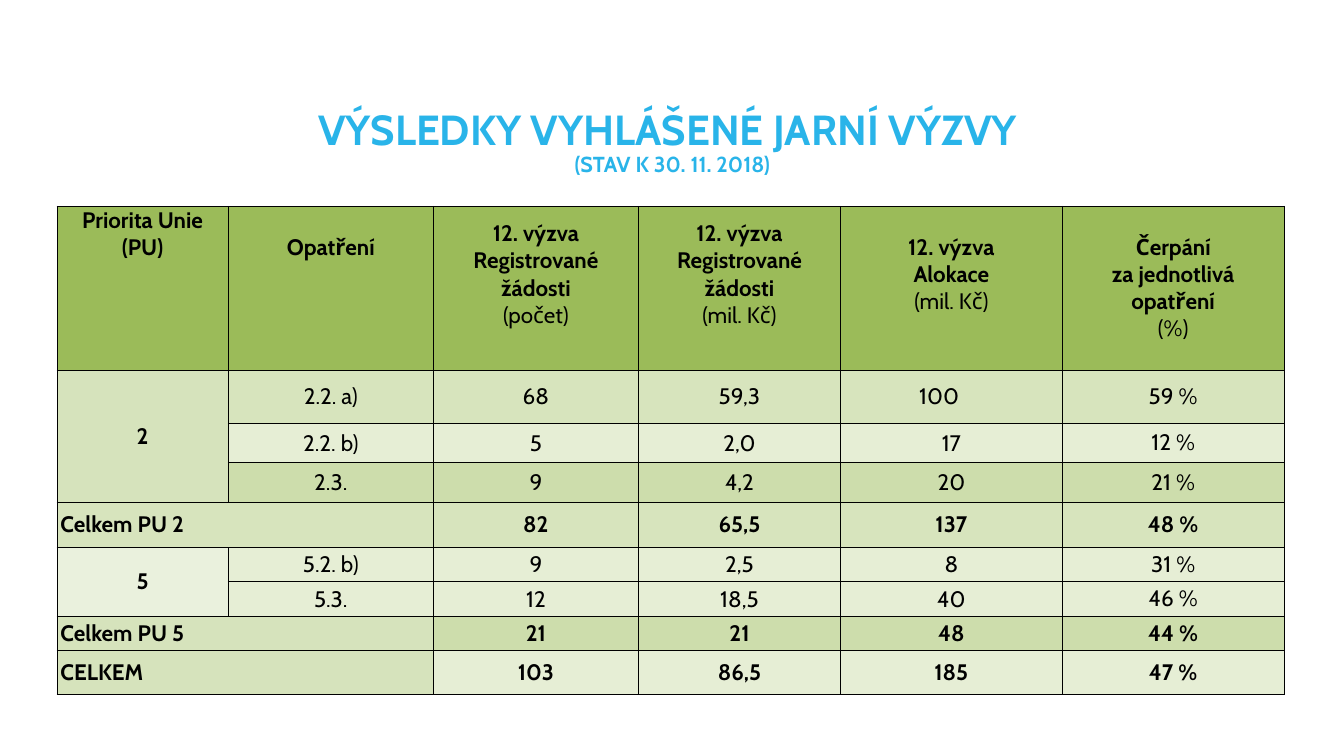
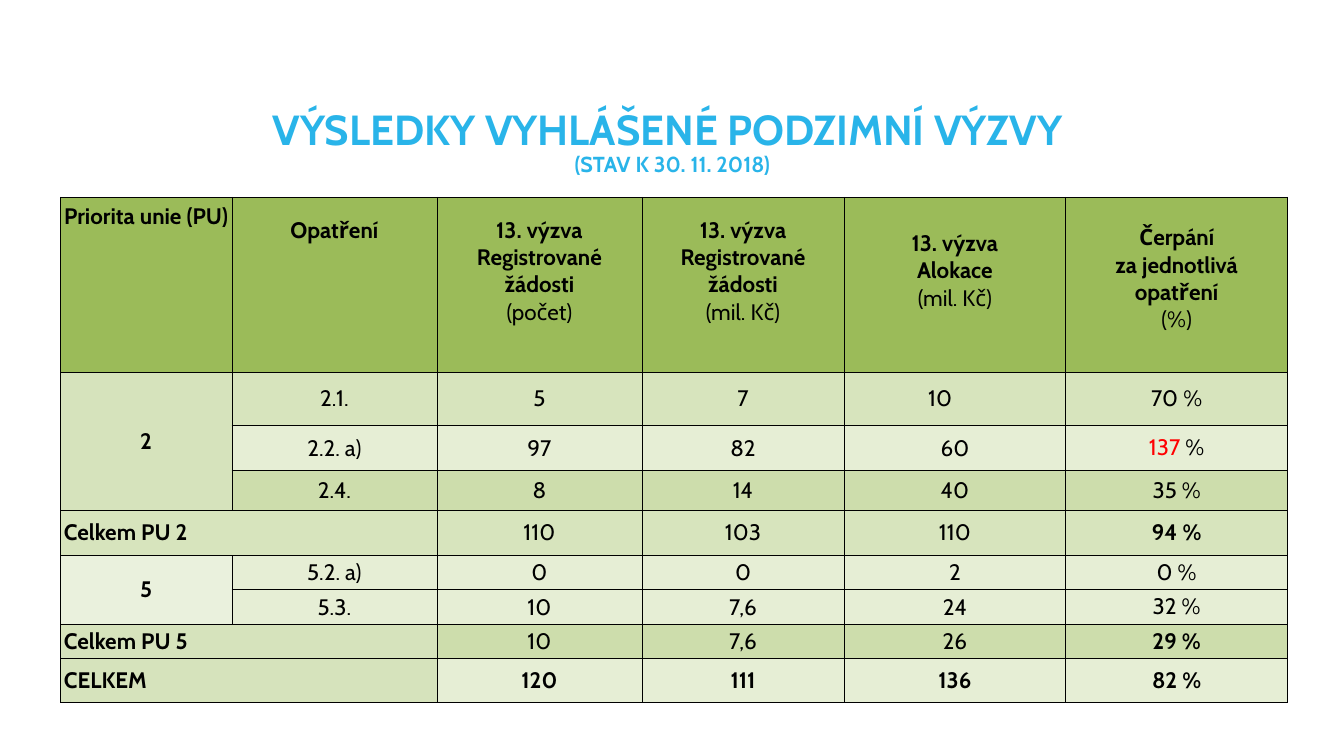
"""Two slides with the results of the spring and autumn calls, one table each."""
from lxml.etree import SubElement
from pptx import Presentation
from pptx.dml.color import RGBColor
from pptx.enum.text import MSO_ANCHOR, MSO_AUTO_SIZE, PP_ALIGN
from pptx.oxml.ns import qn
from pptx.util import Inches, Pt

COLORS = {
    "title": "29B4E9", "text": "000000", "over": "FF0000", "border": "000000",
    "header": "9BBB59", "light": "E6EED5", "mid": "D7E4BD", "dark": "CDDDAC",
    "group": "D6E3BC", "group_light": "EAF1DD",
}
FONT = "Cabin"
STATUS = "(STAV K 30. 11. 2018)"
MARGINS = {"margin_left": 0.07, "margin_right": 0.07, "margin_top": 0.01, "margin_bottom": 0}
NO_MARGINS = dict.fromkeys(MARGINS, 0)
TITLE_BOX = {"left": 1.37, "top": 2.16, "width": 23.94, "height": 1.34}
COLUMN_WIDTHS = [3.4, 4.07, 4.07, 4.01, 4.4, 4.4]
ROW_FILLS = ["mid", "light", "dark", "mid", "light", "light", "dark", "light"]
LABEL_FILLS = ["group", "group", "group", "mid", "group_light", "group_light", "group", "group"]
ALLOCATION, DRAWN = 4, 5

CALLS = [
    {
        "title": "VÝSLEDKY VYHLÁŠENÉ JARNÍ VÝZVY",
        "number": "12. výzva",
        "priority": "Priorita Unie (PU)",
        "header_tops": [0.01, 0.54, 0.27, 0.27, 0.54, 0.54],
        "table_at": (1.13, 4.09),
        "row_heights": [3.25, 1.05, 0.79, 0.78, 0.9, 0.68, 0.68, 0.68, 0.88],
        "bold_subtotals": True,
        "first_allocation_left": 1.56,
        "rows": [
            ("2", "2.2. a)", "68", "59,3", "100", "59 %"),
            ("", "2.2. b)", "5", "2,0", "17", "12 %"),
            ("", "2.3.", "9", "4,2", "20", "21 %"),
            ("Celkem PU 2", "", "82", "65,5", "137", "48 %"),
            ("5", "5.2. b)", "9", "2,5", "8", "31 %"),
            ("", "5.3.", "12", "18,5", "40", "46 %"),
            ("Celkem PU 5", "", "21", "21", "48", "44 %"),
            ("CELKEM", "", "103", "86,5", "185", "47 %"),
        ],
    },
    {
        "title": "VÝSLEDKY VYHLÁŠENÉ PODZIMNÍ VÝZVY",
        "number": "13. výzva",
        "priority": "Priorita unie (PU)",
        "header_tops": [0.12, 0.39, 0.39, 0.39, 0.65, 0.54],
        "table_at": (1.2, 3.91),
        "row_heights": [3.47, 1.05, 0.91, 0.78, 0.9, 0.68, 0.68, 0.68, 0.88],
        "bold_subtotals": False,
        "first_allocation_left": 1.67,
        "rows": [
            ("2", "2.1.", "5", "7", "10", "70 %"),
            ("", "2.2. a)", "97", "82", "60", "137 %"),
            ("", "2.4.", "8", "14", "40", "35 %"),
            ("Celkem PU 2", "", "110", "103", "110", "94 %"),
            ("5", "5.2. a)", "0", "0", "2", "0 %"),
            ("", "5.3.", "10", "7,6", "24", "32 %"),
            ("Celkem PU 5", "", "10", "7,6", "26", "29 %"),
            ("CELKEM", "", "120", "111", "136", "82 %"),
        ],
    },
]


def header_lines(call):
    number = call["number"]
    requests = f"{number} Registrované žádosti"
    return [
        [call["priority"]],
        ["Opatření"],
        [requests, "(počet)"],
        [requests, "(mil. Kč)"],
        [number, "Alokace", "(mil. Kč)"],
        ["Čerpání", "za jednotlivá", "opatření", "(%)"],
    ]


def set_inches(target, lengths):
    for attribute, length in lengths.items():
        setattr(target, attribute, Inches(length))


def add_run(paragraph, text, size=32, bold=False, color="text"):
    run = paragraph.add_run()
    run.text = text
    for attribute, value in {"name": FONT, "size": Pt(size), "bold": bold}.items():
        setattr(run.font, attribute, value)
    run.font.color.rgb = RGBColor.from_string(COLORS[color])


def style_cell(cell, fill, column):
    set_inches(cell, NO_MARGINS if column == DRAWN else MARGINS)
    cell.vertical_anchor = MSO_ANCHOR.MIDDLE
    properties = cell._tc.get_or_add_tcPr()
    for side in ("a:lnL", "a:lnR", "a:lnT", "a:lnB"):
        line = SubElement(properties, qn(side), w=str(Pt(1)))
        solid = SubElement(line, qn("a:solidFill"))
        SubElement(solid, qn("a:srgbClr"), val=COLORS["border"])
    cell.fill.solid()
    cell.fill.fore_color.rgb = RGBColor.from_string(COLORS[fill])


def fill_header(table, call):
    for column, (lines, top) in enumerate(zip(header_lines(call), call["header_tops"])):
        cell = table.cell(0, column)
        style_cell(cell, "header", column)
        cell.vertical_anchor = MSO_ANCHOR.TOP
        cell.margin_top = Inches(top)
        for index, line in enumerate(lines):
            paragraph = cell.text_frame.add_paragraph() if index else cell.text_frame.paragraphs[0]
            paragraph.alignment = PP_ALIGN.CENTER
            add_run(paragraph, line, bold=not line.startswith("("))


def fill_row(table, call, index, values):
    is_total = not values[1]
    bold_values = is_total and (call["bold_subtotals"] or values[0] == "CELKEM")
    for column, value in enumerate(values):
        cell = table.cell(index + 1, column)
        in_label = column == 0 or (is_total and column == 1)
        style_cell(cell, (LABEL_FILLS if in_label else ROW_FILLS)[index], column)
        if not value:
            continue
        paragraph = cell.text_frame.paragraphs[0]
        paragraph.alignment = PP_ALIGN.LEFT if is_total and in_label else PP_ALIGN.CENTER
        bold = in_label or bold_values or (is_total and column == DRAWN)
        share, space, sign = value.partition(" %")
        if space and int(share) > 100:
            add_run(paragraph, share, bold=bold, color="over")
            add_run(paragraph, space, bold=bold)
        else:
            add_run(paragraph, value, bold=bold)
    if is_total:
        table.cell(index + 1, 0).merge(table.cell(index + 1, 1))


def merge_priorities(table, rows):
    starts = [index for index, row in enumerate(rows) if row[0]] + [len(rows)]
    for start, following in zip(starts, starts[1:]):
        if following - start > 1:
            table.cell(start + 1, 0).merge(table.cell(following, 0))


def add_title(slide, text):
    title = slide.shapes.title
    set_inches(title, TITLE_BOX)
    frame = title.text_frame
    set_inches(frame, NO_MARGINS)
    formats = {"word_wrap": True, "auto_size": MSO_AUTO_SIZE.NONE, "vertical_anchor": MSO_ANCHOR.TOP}
    for attribute, value in formats.items():
        setattr(frame, attribute, value)
    paragraph = frame.paragraphs[0]
    paragraph.alignment = PP_ALIGN.CENTER
    paragraph.line_spacing = 0.9
    add_run(paragraph, text + " ", 60, True, "title")
    paragraph.add_line_break()
    add_run(paragraph, STATUS, 31, True, "title")


def add_results(slide, call):
    rows, heights = call["rows"], call["row_heights"]
    left, top = call["table_at"]
    box = [Inches(length) for length in (left, top, sum(COLUMN_WIDTHS), sum(heights))]
    table = slide.shapes.add_table(len(heights), len(COLUMN_WIDTHS), *box).table
    table.first_row = table.horz_banding = False
    for column, width in zip(table.columns, COLUMN_WIDTHS):
        column.width = Inches(width)
    for row, height in zip(table.rows, heights):
        row.height = Inches(height)
    fill_header(table, call)
    for index, values in enumerate(rows):
        fill_row(table, call, index, values)
    merge_priorities(table, rows)
    first_allocation = table.cell(1, ALLOCATION)
    first_allocation.margin_left = Inches(call["first_allocation_left"])
    first_allocation.text_frame.paragraphs[0].alignment = PP_ALIGN.LEFT


def main():
    deck = Presentation()
    deck.slide_width, deck.slide_height = Inches(26.67), Inches(15)
    for call in CALLS:
        slide = deck.slides.add_slide(deck.slide_layouts[5])
        add_title(slide, call["title"])
        add_results(slide, call)
    deck.save("out.pptx")


if __name__ == "__main__":
    main()
